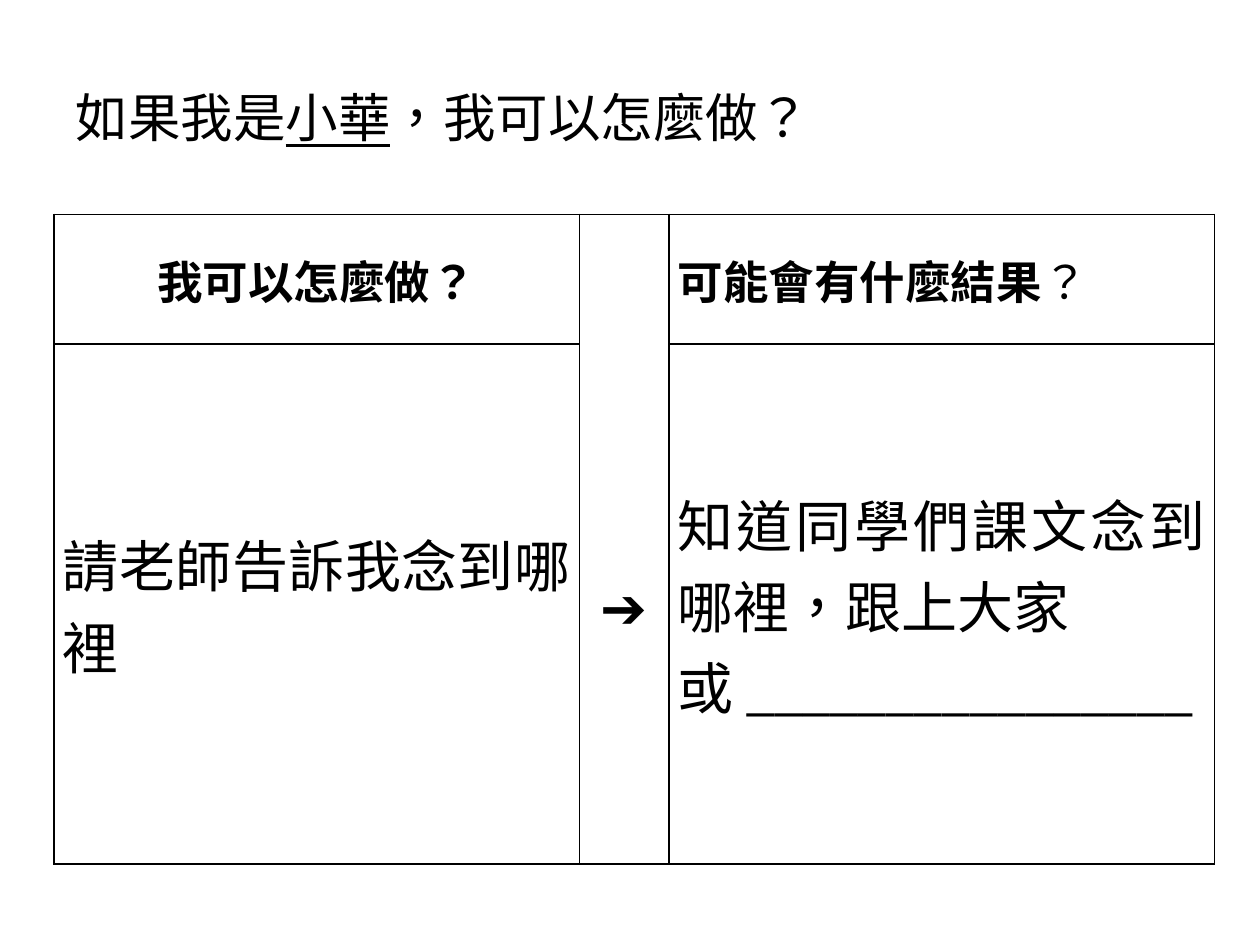
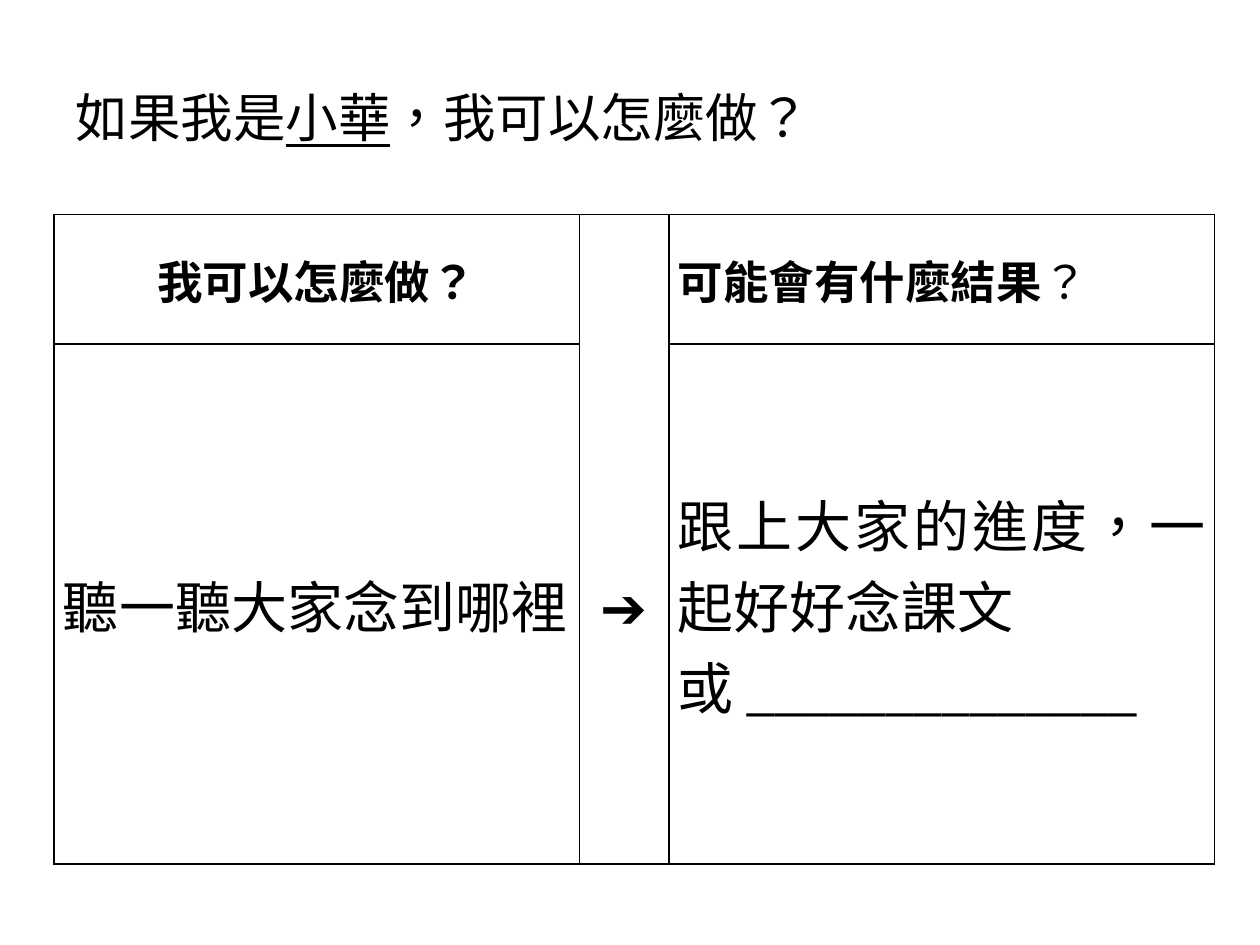
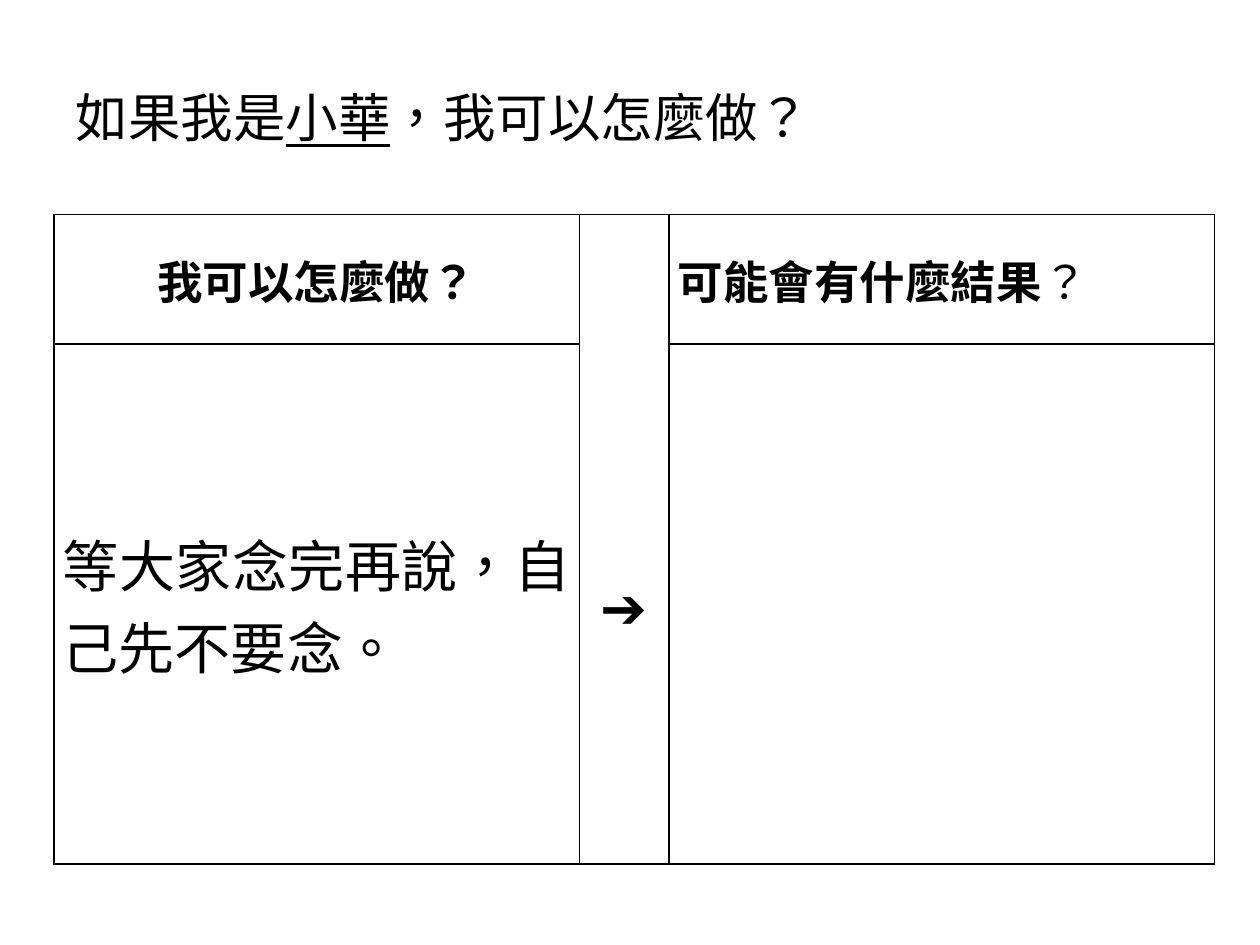
"""Builds three question-and-outcome slides that share one title and table frame."""
from dataclasses import dataclass

from lxml import etree
from pptx import Presentation
from pptx.dml.color import RGBColor
from pptx.enum.text import MSO_ANCHOR, PP_ALIGN
from pptx.oxml.ns import qn
from pptx.util import Inches, Pt

MIDDLE = MSO_ANCHOR.MIDDLE
LEFT, CENTER, JUSTIFY = PP_ALIGN.LEFT, PP_ALIGN.CENTER, PP_ALIGN.JUSTIFY


@dataclass(frozen=True)
class Theme:
    """Colours, fonts, type sizes and border weight."""
    ink: str = "000000"
    east: str = "Noto Sans CJK SC"
    latin: str = "Calibri"
    language: str = "zh-TW"
    title: int = 30
    header: int = 26
    body: int = 32
    border: int = 1


class Deck:
    """Holds the presentation, its theme and the current slide."""

    def __init__(self, theme):
        """Start an empty deck of 10 by 7.5 inches."""
        self.theme = theme
        self.prs = Presentation()
        self.prs.slide_width, self.prs.slide_height = Inches(10), Inches(7.5)
        self.s = None

    def x(self, share):
        """Return a share of the slide width."""
        return int(self.prs.slide_width * share)

    def y(self, share):
        """Return a share of the slide height."""
        return int(self.prs.slide_height * share)

    def add_slide(self):
        """Add a slide that has only a title placeholder."""
        self.s = self.prs.slides.add_slide(self.prs.slide_layouts[5])

    def add_runs(self, p, runs, size, align):
        """Write (text, format) runs into a paragraph."""
        p.alignment = align
        for text, extra in runs:
            r = p.add_run()
            r.text = text
            style = {"size": Pt(size), "name": self.theme.east,
                     "bold": False, "underline": False, **extra}
            for name, value in style.items():
                setattr(r.font, name, value)
            r.font.color.rgb = RGBColor.from_string(self.theme.ink)
            rPr = r.font._element
            rPr.set("lang", self.theme.language)
            ea = etree.Element(qn("a:ea"), typeface=self.theme.east)
            rPr.find(qn("a:latin")).addnext(ea)

    def add_title(self, runs):
        """Fill the title placeholder."""
        sp = self.s.shapes.title
        sp.left, sp.top = self.x(0.05), self.y(0.04)
        sp.width, sp.height = self.x(0.9), self.y(1 / 6)
        tf = sp.text_frame
        tf.vertical_anchor = MIDDLE
        self.add_runs(tf.paragraphs[0], runs, self.theme.title, LEFT)

    def add_borders(self, cell, hidden):
        """Draw the four cell borders, leaving out the hidden side."""
        tcPr = cell._tc.get_or_add_tcPr()
        for side in "LRTB":
            ln = etree.SubElement(tcPr, qn(f"a:ln{side}"), w=str(Pt(self.theme.border)))
            if side == hidden:
                etree.SubElement(ln, qn("a:noFill"))
            else:
                fill = etree.SubElement(ln, qn("a:solidFill"))
                etree.SubElement(fill, qn("a:srgbClr"), val=self.theme.ink)

    def add_cell(self, cell, paragraphs, size, hidden):
        """Format a cell and write its (alignment, runs) paragraphs."""
        style = {"vertical_anchor": MIDDLE, "margin_left": Inches(0.07),
                 "margin_right": Inches(0.07), "margin_top": 0, "margin_bottom": 0}
        for name, value in style.items():
            setattr(cell, name, value)
        self.add_borders(cell, hidden)
        cell.fill.background()
        tf = cell.text_frame
        for i, (align, runs) in enumerate(paragraphs):
            p = tf.add_paragraph() if i else tf.paragraphs[0]
            self.add_runs(p, runs, size, align)

    def add_table(self, rows):
        """Add the action, arrow and outcome table."""
        widths = [self.x(share) for share in (0.417, 0.071, 0.433)]
        heights = [self.y(0.6875 * share) for share in (0.2, 0.8)]
        table = self.s.shapes.add_table(len(heights), len(widths), self.x(0.043), self.y(0.2267),
                                        sum(widths), sum(heights)).table
        table.first_row = table.horz_banding = False
        for col, width in zip(table.columns, widths):
            col.width = width
        for row, height in zip(table.rows, heights):
            row.height = height
        sizes = (self.theme.header, self.theme.body)
        for i, (cells, size, open_side) in enumerate(zip(rows, sizes, "BT")):
            for j, paragraphs in enumerate(cells):
                hidden = open_side if j == 1 else None
                self.add_cell(table.cell(i, j), paragraphs, size, hidden)


THEME = Theme()
PLAIN, BOLD, UNDERLINE = {}, {"bold": True}, {"underline": True}
BODY = {"name": THEME.latin}

TITLE = [("如果我是", PLAIN), ("小華", UNDERLINE), ("，我可以怎麼做？", PLAIN)]
HEADER = [
    [(CENTER, [("我可以怎麼做？", BOLD)])],
    [],
    [(LEFT, [("可能會有什麼結果", BOLD), ("？", PLAIN)])],
]
ARROW = [(CENTER, [("➔", PLAIN)])]
CHOICES = [
    ([("請老師告訴我念到哪裡", BODY)],
     [(JUSTIFY, [("知道同學們課文念到哪裡，跟上大家", BODY)]),
      (LEFT, [("或 ________________", BODY)])]),
    ([("聽", BODY), ("一", PLAIN), ("聽大家念到哪裡", BODY)],
     [(JUSTIFY, [("跟上大家的進度，", BODY), ("一", PLAIN), ("起好好念課文", BODY)]),
      (LEFT, [("或 ______________", BODY)])]),
    ([("等大家念完再說，自己先不要念。", BODY)], []),
]


def main():
    """Build and save the deck."""
    deck = Deck(THEME)
    for action, outcome in CHOICES:
        deck.add_slide()
        deck.add_title(TITLE)
        deck.add_table([HEADER, [[(JUSTIFY, action)], ARROW, outcome]])
    deck.prs.save("out.pptx")


if __name__ == "__main__":
    main()
